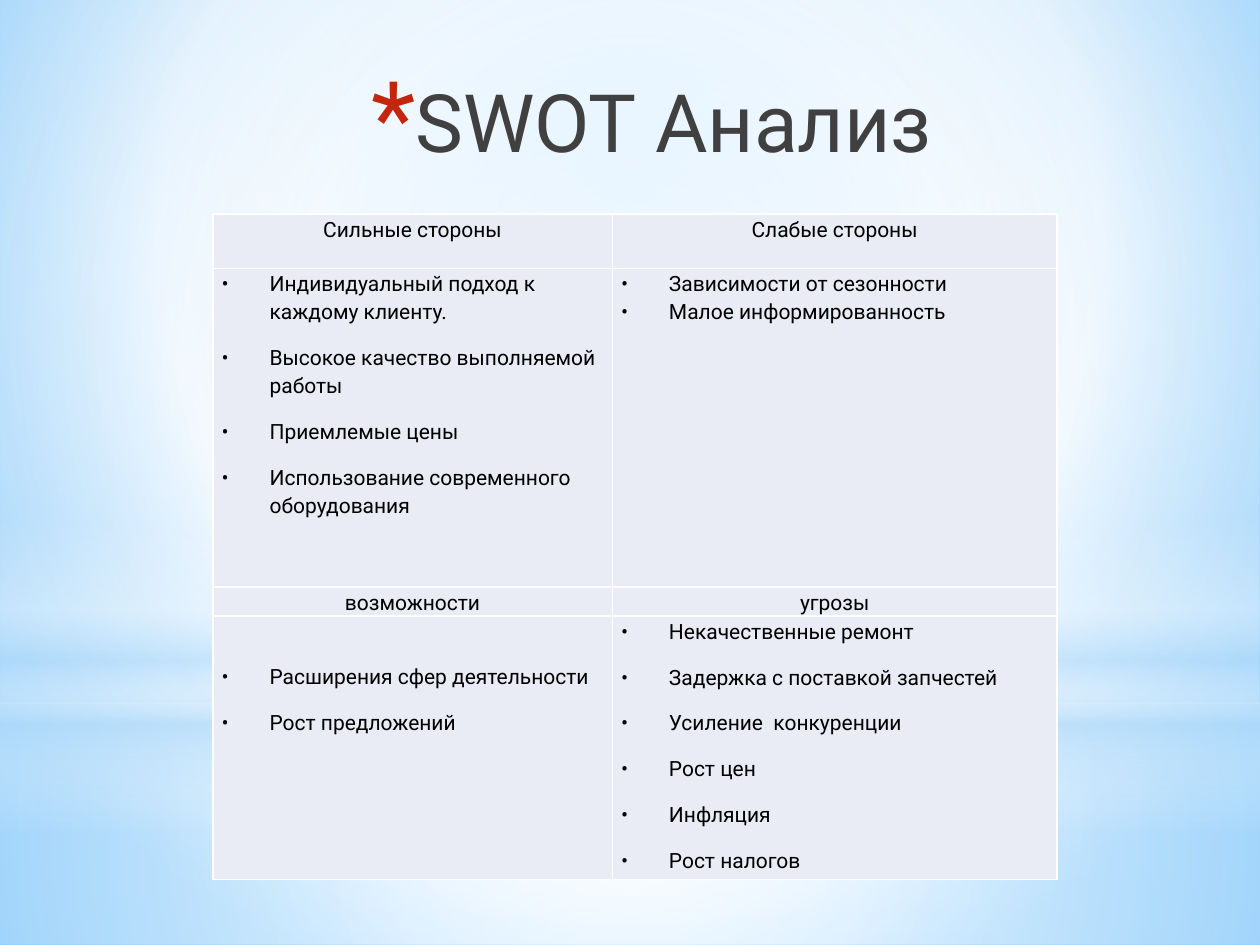
from dataclasses import dataclass

from lxml.etree import SubElement as Sub
from pptx import Presentation as Deck
from pptx.dml.color import RGBColor as Rgb
from pptx.enum.shapes import MSO_SHAPE as Kind
from pptx.enum.text import MSO_ANCHOR as Anchor, PP_ALIGN as Align
from pptx.oxml.ns import qn
from pptx.util import Inches, Pt


@dataclass(frozen=True)
class Theme:
    font: str = "Roboto"
    title: str = "404040"
    star: str = "C3260C"
    text: str = "000000"
    cell: str = "E9EBF5"
    line: str = "FFFFFF"
    white: str = "FFFFFF"
    haze: str = "B4DCFA"
    sky: str = "9ED5FF"
    deep: str = "5BB9FF"
    head_size: int = 46
    body_size: int = 12


@dataclass(frozen=True)
class Stop:
    pos: int
    color: str
    alpha: int = 100


@dataclass(frozen=True)
class Layer:
    kind: Kind
    box: tuple[float, float, float, float]
    stops: tuple[Stop, ...]
    angle: int | None = None


@dataclass(frozen=True)
class Cell:
    lines: tuple[str, ...]
    list: bool = False
    gap: int = 10
    top: float = 0


LOOK = Theme()
CENTER = (50, 50, 50, 50)
WHITE, HAZE = LOOK.white, LOOK.haze
SKY = (Stop(0, LOOK.sky), Stop(60, WHITE), Stop(100, LOOK.deep))
LAYERS = (
    Layer(Kind.RECTANGLE, (0, 5.58, 10, 1.92),
          (Stop(0, WHITE, 91), Stop(37, WHITE, 76), Stop(100, HAZE, 79))),
    Layer(Kind.RECTANGLE, (0, 0, 10, 5.58),
          (Stop(0, WHITE, 89), Stop(48, WHITE, 62), Stop(100, HAZE, 79))),
    Layer(Kind.RECTANGLE, (0, 4.12, 10, 2.5),
          (Stop(0, WHITE, 0), Stop(29, WHITE, 30), Stop(45, HAZE, 40),
           Stop(55, WHITE, 26), Stop(65, HAZE, 60), Stop(100, WHITE, 0)), 90),
    Layer(Kind.OVAL, (0, 1.75, 10, 5.58), (Stop(0, WHITE), Stop(56, WHITE, 0))),
)
COLS = (3.17, 3.53)
ROWS = (0.43, 2.53, 0.22, 2.09)
GRID = (
    (Cell(("Сильные стороны",)), Cell(("Слабые стороны",))),
    (Cell(("Индивидуальный подход к каждому клиенту.",
           "Высокое качество выполняемой работы",
           "Приемлемые цены",
           "Использование современного оборудования"), True),
     Cell(("Зависимости от сезонности", "Малое информированность"), True, 0)),
    (Cell(("возможности",)), Cell(("угрозы",))),
    (Cell(("Расширения сфер деятельности", "Рост предложений"), True, top=0.36),
     Cell(("Некачественные ремонт", "Задержка с поставкой запчестей",
           "Усиление  конкуренции", "Рост цен", "Инфляция", "Рост налогов"), True)),
)


def blend(node, stops: tuple[Stop, ...], focus=CENTER, angle: int | None = None) -> None:
    for kid in list(node):
        node.remove(kid)
    band = Sub(node, qn("a:gsLst"))
    for stop in stops:
        mark = Sub(band, qn("a:gs"), pos=str(stop.pos * 1000))
        tint = Sub(mark, qn("a:srgbClr"), val=stop.color)
        if stop.alpha < 100:
            Sub(tint, qn("a:alpha"), val=str(stop.alpha * 1000))
    if angle is None:
        ring = Sub(node, qn("a:path"), {"path": "circle"})
        sides = {side: str(part * 1000) for side, part in zip("ltrb", focus)}
        Sub(ring, qn("a:fillToRect"), sides)
    else:
        Sub(node, qn("a:lin"), ang=str(angle * 60000), scaled="0")


def paint(slide) -> None:
    slide.background.fill.gradient()
    blend(slide.element.find(".//" + qn("a:gradFill")), SKY, (20, 10, 20, 60))
    for layer in LAYERS:
        shape = slide.shapes.add_shape(layer.kind, *map(Inches, layer.box))
        shape.shadow.inherit = False
        shape.line.fill.background()
        shape.fill.gradient()
        blend(shape.element.spPr.find(qn("a:gradFill")), layer.stops, angle=layer.angle)


def write(para, text: str, size: int, color: str) -> None:
    run = para.add_run()
    run.text = text
    run.font.name = LOOK.font
    run.font.size = Pt(size)
    run.font.color.rgb = Rgb.from_string(color)


def mark(para, sign: str, indent: float, color: str, scale: int = 100) -> None:
    props = para._p.get_or_add_pPr()
    props.set("marL", str(Inches(indent)))
    props.set("indent", str(-Inches(indent)))
    Sub(Sub(props, qn("a:buClr")), qn("a:srgbClr"), val=color)
    Sub(props, qn("a:buSzPct"), val=str(scale * 1000))
    Sub(props, qn("a:buFont"), typeface=LOOK.font)
    Sub(props, qn("a:buChar"), char=sign)


def head(slide) -> None:
    box = slide.shapes.add_textbox(*map(Inches, (1.61, 0.52, 7.12, 1.25)))
    frame = box.text_frame
    frame.word_wrap = True
    frame.vertical_anchor = Anchor.TOP
    para = frame.paragraphs[0]
    para.alignment = Align.CENTER
    mark(para, "*", 0.35, LOOK.star, 128)
    write(para, "SWOT Анализ", LOOK.head_size, LOOK.title)


def edge(cell) -> None:
    props = cell._tc.get_or_add_tcPr()
    for spot, side in enumerate(("lnL", "lnR", "lnT", "lnB")):
        line = Sub(props, qn(f"a:{side}"), w=str(Pt(1)))
        Sub(Sub(line, qn("a:solidFill")), qn("a:srgbClr"), val=LOOK.line)
        props.insert(spot, line)


def fill(cell, data: Cell) -> None:
    cell.fill.solid()
    cell.fill.fore_color.rgb = Rgb.from_string(LOOK.cell)
    edge(cell)
    cell.margin_left = cell.margin_right = Inches(0.07)
    cell.margin_top, cell.margin_bottom = Inches(data.top), 0
    frame = cell.text_frame
    for spot, text in enumerate(data.lines):
        para = frame.add_paragraph() if spot else frame.paragraphs[0]
        para.line_spacing = 1.15
        para.space_after = Pt(data.gap)
        if data.list:
            mark(para, "•", 0.38, LOOK.text)
        else:
            para.alignment = Align.CENTER
        write(para, text, LOOK.body_size, LOOK.text)


def chart(slide) -> None:
    area = map(Inches, (1.69, 1.7, sum(COLS), sum(ROWS)))
    table = slide.shapes.add_table(len(ROWS), len(COLS), *area).table
    table.first_row = table.horz_banding = False
    for col, width in zip(table.columns, COLS):
        col.width = Inches(width)
    for row, height, cells in zip(table.rows, ROWS, GRID):
        row.height = Inches(height)
        for cell, data in zip(row.cells, cells):
            fill(cell, data)


def main() -> None:
    deck = Deck()
    deck.slide_width, deck.slide_height = Inches(10), Inches(7.5)
    slide = deck.slides.add_slide(deck.slide_layouts[6])
    paint(slide)
    head(slide)
    chart(slide)
    deck.save("out.pptx")


if __name__ == "__main__":
    main()
